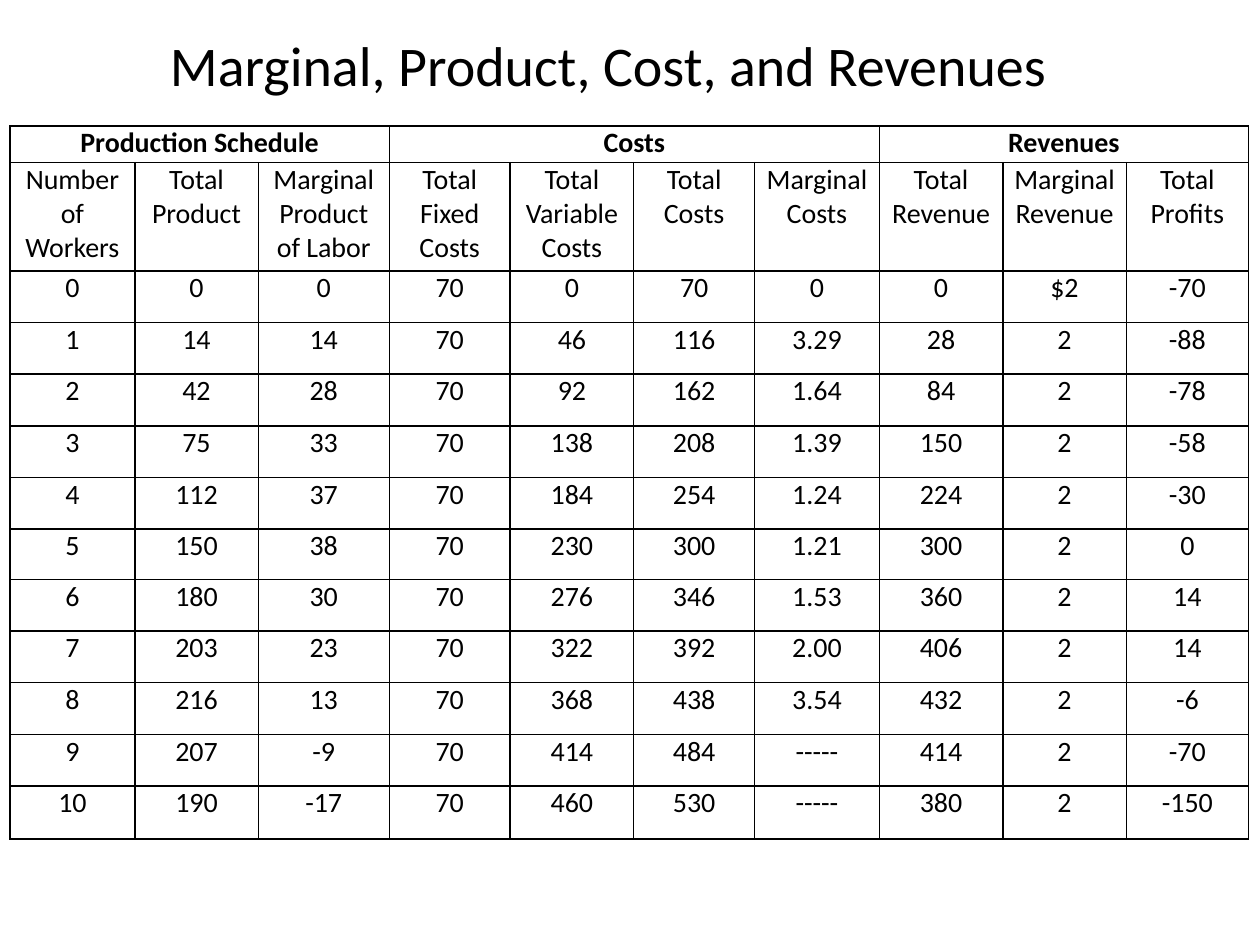
from lxml.etree import SubElement
from pptx import Presentation
from pptx.dml.color import RGBColor
from pptx.enum.text import MSO_ANCHOR, PP_ALIGN
from pptx.oxml.ns import qn
from pptx.util import Inches, Pt

GROUPS = [("Production Schedule", 3), ("Costs", 4), ("Revenues", 3)]
HEADINGS = ["Number of Workers", "Total Product", "Marginal Product of Labor",
            "Total Fixed Costs", "Total Variable Costs", "Total Costs",
            "Marginal Costs", "Total Revenue", "Marginal Revenue",
            "Total Profits"]
SCHEDULE = """
0 0 0 70 0 70 0 0 $2 -70
1 14 14 70 46 116 3.29 28 2 -88
2 42 28 70 92 162 1.64 84 2 -78
3 75 33 70 138 208 1.39 150 2 -58
4 112 37 70 184 254 1.24 224 2 -30
5 150 38 70 230 300 1.21 300 2 0
6 180 30 70 276 346 1.53 360 2 14
7 203 23 70 322 392 2.00 406 2 14
8 216 13 70 368 438 3.54 432 2 -6
9 207 -9 70 414 484 ----- 414 2 -70
10 190 -17 70 460 530 ----- 380 2 -150
"""
# Sizes in grid units: the slide is 100 columns by 75 rows
COL_WIDTHS = [9.9, 9.8, 10.4, 9.6, 9.8, 9.6, 9.9, 9.8, 9.8, 9.7]
ROW_HEIGHTS = [2.9, 8.6] + [4.1] * 5 + [4] + [4.1] * 4 + [4.2]


def color(value):
    return RGBColor.from_string(value)


class SlideBuilder:
    font = "Calibri"
    ink = "000000"
    cell_format = {"margin_left": Inches(0.07), "margin_right": Inches(0.07),
                   "margin_top": 0, "margin_bottom": 0,
                   "vertical_anchor": MSO_ANCHOR.TOP}

    def __init__(self, prs):
        self.slide = prs.slides.add_slide(prs.slide_layouts[6])
        self.unit = prs.slide_width / 100

    def size(self, units):
        return round(units * self.unit)

    def add_text(self, tf, text, size, bold=False, align=PP_ALIGN.LEFT):
        p = tf.paragraphs[0]
        p.alignment = align
        r = p.add_run()
        r.text = text
        for name, value in {"name": self.font, "size": Pt(size),
                            "bold": bold}.items():
            setattr(r.font, name, value)
        r.font.color.rgb = color(self.ink)

    def title(self, text, *box):
        sp = self.slide.shapes.add_textbox(*map(self.size, box))
        sp.text_frame.word_wrap = True
        self.add_text(sp.text_frame, text, 32)

    def style_cell(self, cell):
        for name, value in self.cell_format.items():
            setattr(cell, name, value)
        tc_pr = cell._tc.get_or_add_tcPr()
        for side in ("lnL", "lnR", "lnT", "lnB"):
            ln = SubElement(tc_pr, qn(f"a:{side}"), w=str(Pt(1)))
            fill = SubElement(ln, qn("a:solidFill"))
            SubElement(fill, qn("a:srgbClr"), val=self.ink)
        cell.fill.background()

    def table(self, left, top, groups, rows, widths, heights):
        box = map(self.size, (left, top, sum(widths), sum(heights)))
        table = self.slide.shapes.add_table(len(heights), len(widths),
                                            *box).table
        table.first_row = table.horz_banding = False
        for column, width in zip(table.columns, widths):
            column.width = self.size(width)
        for row, height in zip(table.rows, heights):
            row.height = self.size(height)
        for cell in table.iter_cells():
            self.style_cell(cell)

        # Merged group headings
        start = 0
        for text, span in groups:
            cell = table.cell(0, start)
            cell.merge(table.cell(0, start + span - 1))
            self.add_text(cell.text_frame, text, 16, True, PP_ALIGN.CENTER)
            start += span

        # Column headings and figures
        for i, row in enumerate(rows, 1):
            for j, text in enumerate(row):
                self.add_text(table.cell(i, j).text_frame, text, 16,
                              align=PP_ALIGN.CENTER)


def main():
    prs = Presentation()
    prs.slide_width, prs.slide_height = Inches(10), Inches(7.5)
    s = SlideBuilder(prs)
    figures = [line.split() for line in SCHEDULE.strip().splitlines()]
    s.table(0.8, 10, GROUPS, [HEADINGS] + figures, COL_WIDTHS, ROW_HEIGHTS)
    s.title("Marginal, Product, Cost, and Revenues", 12.5, 1.9, 75.8, 6.4)
    prs.save("out.pptx")


if __name__ == "__main__":
    main()
